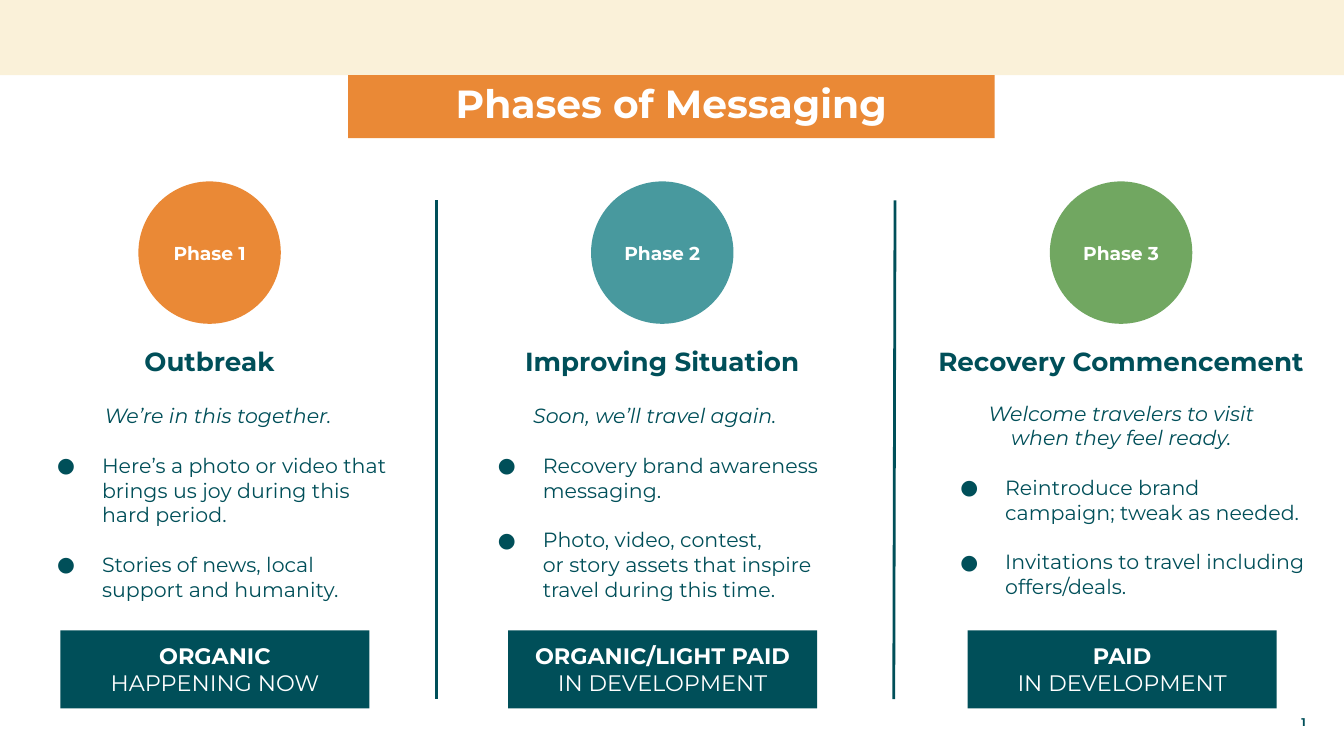
from lxml.etree import SubElement
from pptx import Presentation
from pptx.dml.color import RGBColor
from pptx.enum.shapes import MSO_CONNECTOR as Connector, MSO_SHAPE as Shape
from pptx.enum.text import MSO_ANCHOR as Anchor, PP_ALIGN as Align
from pptx.oxml.ns import qn
from pptx.util import Pt

# Content
COLORS = {"cream": "FAF1D9", "orange": "EA8936", "teal": "48999E",
          "green": "71A761", "dark": "004F59", "white": "FFFFFF"}
FONT = "Montserrat"
TITLE = "Phases of Messaging"
PAGE_NUMBER = "1"
PHASES = [
    {"label": "Phase 1", "color": "orange", "name": "Outbreak",
     "motto": "We’re in this together.",
     "points": ["Here’s a photo or video that brings us joy during this hard period.",
                "Stories of news, local\vsupport and humanity."],
     "tag": ("ORGANIC", "HAPPENING NOW"),
     "center": 112.3, "name_width": 103.7, "body": (13.7, 213.1, 206.6, 157.7),
     "tag_left": 32.4},
    {"label": "Phase 2", "color": "teal", "name": "Improving Situation",
     "motto": "Soon, we’ll travel again.",
     "points": ["Recovery brand awareness messaging.",
                "Photo, video, contest,\vor story assets that inspire travel during this time."],
     "tag": ("ORGANIC/LIGHT PAID", "IN DEVELOPMENT"),
     "center": 354.8, "name_width": 254.2, "body": (249.8, 213.1, 202.3, 123.1),
     "tag_left": 272.2},
    {"label": "Phase 3", "color": "green", "name": "Recovery Commencement",
     "motto": "Welcome travelers to visit\vwhen they feel ready.",
     "points": ["Reintroduce brand campaign; tweak as needed.",
                "Invitations to travel including offers/deals."],
     "tag": ("PAID", "IN DEVELOPMENT"),
     "center": 600.6, "name_width": 238.3, "body": (497.5, 211.7, 206.6, 119.5),
     "tag_left": 518.4},
]
DIVIDERS = [(234, 234), (479.5, 478.8)]  # x at top, x at bottom

# Layout
WIDTH, HEIGHT = 720, 405
BAND = 40.3
CIRCLE, CIRCLE_TOP = 76.3, 97.2
NAME_TOP, NAME_HEIGHT = 182.2, 21.6
TAG_TOP, TAG_WIDTH, TAG_HEIGHT = 337.7, 165.6, 41.8
DIVIDER_TOP, DIVIDER_BOTTOM = 107.3, 374.6
BODY_GAP = 13.4
BULLET_INDENT, BULLET_HANG = 36, 24


def rgb(name):
    return RGBColor.from_string(COLORS[name])


def set_frame(box, inset_x, inset_y, anchor):
    frame = box.text_frame
    frame.word_wrap = True
    frame.margin_left = frame.margin_right = Pt(inset_x)
    frame.margin_top = frame.margin_bottom = Pt(inset_y)
    frame.vertical_anchor = anchor


def add_filled(page, kind, area, color, inset=(0, 0), anchor=Anchor.MIDDLE):
    shape = page.shapes.add_shape(kind, *map(Pt, area))
    shape.shadow.inherit = False
    shape.fill.solid()
    shape.fill.fore_color.rgb = rgb(color)
    shape.line.fill.background()
    set_frame(shape, *inset, anchor)
    return shape


def add_text_box(page, area, inset=(5, 3), anchor=Anchor.TOP):
    box = page.shapes.add_textbox(*map(Pt, area))
    set_frame(box, *inset, anchor)
    return box


def add_para(box, text, size, color, bold=False, italic=False,
             align=Align.CENTER, gap=0, bullet=False):
    frame = box.text_frame
    first = not frame.paragraphs[0].runs
    para = frame.paragraphs[0] if first else frame.add_paragraph()
    para.alignment = align
    if gap:
        para.space_before = Pt(gap)
    if bullet:
        add_bullet(para)
    for index, line in enumerate(text.split("\v")):
        if index:
            para.add_line_break()
        span = para.add_run()
        span.text = line
        font = span.font
        font.name, font.size, font.bold, font.italic = FONT, Pt(size), bold, italic
        font.color.rgb = rgb(color)
    return para


def add_bullet(para):
    props = para._p.get_or_add_pPr()
    props.set("marL", str(Pt(BULLET_INDENT)))
    props.set("indent", str(-Pt(BULLET_HANG)))
    SubElement(SubElement(props, qn("a:buClr")), qn("a:srgbClr"), val=COLORS["dark"])
    SubElement(props, qn("a:buFont"), typeface=FONT)
    SubElement(props, qn("a:buChar"), char="●")


def add_divider(page, top_x, bottom_x):
    line = page.shapes.add_connector(
        Connector.STRAIGHT, *map(Pt, (top_x, DIVIDER_TOP, bottom_x, DIVIDER_BOTTOM)))
    line.line.color.rgb = rgb("dark")
    line.line.width = Pt(1.5)
    SubElement(line._element.spPr, qn("a:effectLst"))


def add_phase(page, phase):
    center = phase["center"]
    circle = add_filled(page, Shape.OVAL, (center - CIRCLE / 2, CIRCLE_TOP, CIRCLE, CIRCLE),
                        phase["color"], (5, 5))
    add_para(circle, phase["label"], 10, "white", bold=True)

    width = phase["name_width"]
    name = add_text_box(page, (center - width / 2, NAME_TOP, width, NAME_HEIGHT))
    add_para(name, phase["name"], 14, "dark", bold=True)

    body = add_text_box(page, phase["body"])
    add_para(body, phase["motto"], 11, "dark", italic=True)
    for point in phase["points"]:
        add_para(body, point, 11, "dark", align=Align.LEFT, gap=BODY_GAP, bullet=True)

    tag = add_filled(page, Shape.RECTANGLE,
                     (phase["tag_left"], TAG_TOP, TAG_WIDTH, TAG_HEIGHT), "dark", (7.2, 7.2))
    channel, status = phase["tag"]
    add_para(tag, channel, 12, "white", bold=True)
    add_para(tag, status, 12, "white")


def main():
    deck = Presentation()
    deck.slide_width, deck.slide_height = Pt(WIDTH), Pt(HEIGHT)
    page = deck.slides.add_slide(deck.slide_layouts[6])

    # Top band, page number and title
    add_filled(page, Shape.RECTANGLE, (0, 0, WIDTH, BAND), "cream")
    number = add_text_box(page, (676.8, 383.8, 43.2, 5.8), (0, 0), Anchor.MIDDLE)
    add_para(number, PAGE_NUMBER, 6, "dark", bold=True)
    title = add_filled(page, Shape.RECTANGLE, (186.5, BAND, 346.3, 33.8), "orange",
                       (10.8, 5), Anchor.TOP)
    add_para(title, TITLE, 21, "white", bold=True).line_spacing = 0.9

    # Dividers and phase columns
    for top_x, bottom_x in DIVIDERS:
        add_divider(page, top_x, bottom_x)
    for phase in PHASES:
        add_phase(page, phase)

    deck.save("out.pptx")


if __name__ == "__main__":
    main()
